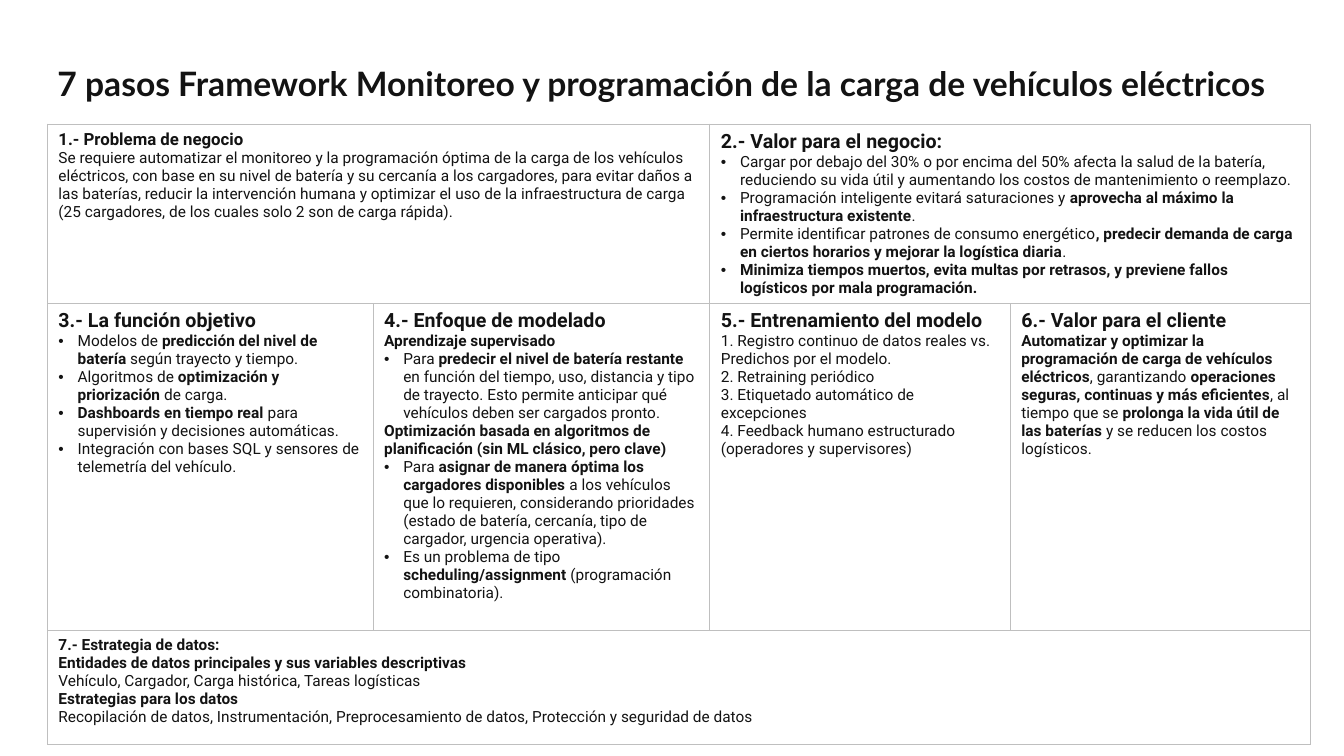
from lxml.etree import SubElement
from pptx import Presentation
from pptx.dml.color import RGBColor
from pptx.enum.text import MSO_ANCHOR, MSO_AUTO_SIZE, PP_ALIGN
from pptx.oxml import parse_xml
from pptx.oxml.ns import nsdecls, qn
from pptx.util import Inches, Pt

COLORS = {"ink": "131313", "border": "BFBFBF", "paper": "FFFFFF"}
SLIDE_SIZE = (13.33, 7.5)
LEFT, WIDTH = 0.47, 12.54
TITLE_TOP, TITLE_HEIGHT = 0.31, 0.77
TABLE_TOP = 1.23
COLUMNS = [3.23, 3.34, 2.98, 2.98]
ROWS = [1.78, 3.24, 1.13]
BULLET_INDENT = 0.19

TITLE = "7 pasos Framework Monitoreo y programación de la carga de vehículos eléctricos"

# Each step: row, column, columns spanned, heading size, heading, lines.
# A leading "• " makes a bullet; ** encloses bold words.
STEPS = [
    (0, 0, 2, 12, "1.- Problema de negocio", [
        "Se requiere automatizar el monitoreo y la programación óptima de la carga de los "
        "vehículos eléctricos, con base en su nivel de batería y su cercanía a los cargadores, "
        "para evitar daños a las baterías, reducir la intervención humana y optimizar el uso de "
        "la infraestructura de carga (25 cargadores, de los cuales solo 2 son de carga rápida).",
    ]),
    (0, 2, 2, 14, "2.- Valor para el negocio:", [
        "• Cargar por debajo del 30% o por encima del 50% afecta la salud de la batería, "
        "reduciendo su vida útil y aumentando los costos de mantenimiento o reemplazo.",
        "• Programación inteligente evitará saturaciones y **aprovecha al máximo la "
        "infraestructura existente**.",
        "• Permite identificar patrones de consumo energético**, predecir demanda de carga en "
        "ciertos horarios y mejorar la logística diaria**.",
        "• **Minimiza tiempos muertos, evita multas por retrasos, y previene fallos logísticos "
        "por mala programación.**",
    ]),
    (1, 0, 1, 14, "3.- La función objetivo", [
        "• Modelos de **predicción del nivel de batería** según trayecto y tiempo.",
        "• Algoritmos de **optimización y priorización** de carga.",
        "• **Dashboards en tiempo real** para supervisión y decisiones automáticas.",
        "• Integración con bases SQL y sensores de telemetría del vehículo.",
    ]),
    (1, 1, 1, 14, "4.- Enfoque de modelado", [
        "**Aprendizaje supervisado**",
        "• Para **predecir el nivel de batería restante** en función del tiempo, uso, distancia "
        "y tipo de trayecto. Esto permite anticipar qué vehículos deben ser cargados pronto.",
        "**Optimización basada en algoritmos de planificación (sin ML clásico, pero clave)**",
        "• Para **asignar de manera óptima los cargadores disponibles** a los vehículos que lo "
        "requieren, considerando prioridades (estado de batería, cercanía, tipo de cargador, "
        "urgencia operativa).",
        "• Es un problema de tipo **scheduling/assignment** (programación combinatoria).",
    ]),
    (1, 2, 1, 14, "5.- Entrenamiento del modelo", [
        "1. Registro continuo de datos reales vs. Predichos por el modelo.",
        "2. Retraining periódico",
        "3. Etiquetado automático de excepciones",
        "4. Feedback humano estructurado (operadores y supervisores)",
    ]),
    (1, 3, 1, 14, "6.- Valor para el cliente", [
        "**Automatizar y optimizar la programación de carga de vehículos eléctricos**, "
        "garantizando **operaciones seguras, continuas y más eficientes**, al tiempo que se "
        "**prolonga la vida útil de las baterías** y se reducen los costos logísticos.",
    ]),
    (2, 0, 4, 11, "7.- Estrategia de datos:", [
        "**Entidades de datos principales y sus variables descriptivas**",
        "Vehículo, Cargador, Carga histórica, Tareas logísticas",
        "**Estrategias para los datos**",
        "Recopilación de datos, Instrumentación, Preprocesamiento de datos, Protección y "
        "seguridad de datos",
    ]),
]


def write_text(paragraph, text, size=11, font="Roboto", color="ink", line_spacing=None):
    """Write one paragraph, turning ** marks into bold runs and "• " into a bullet."""
    paragraph.alignment = PP_ALIGN.LEFT
    if line_spacing:
        paragraph.line_spacing = line_spacing
    if text.startswith("• "):
        text = text[2:]
        add_bullet(paragraph)
    for index, words in enumerate(text.split("**")):
        if words:
            run = paragraph.add_run()
            run.text = words
            run.font.size = Pt(size)
            run.font.name = font
            run.font.bold = index % 2 == 1
            run.font.color.rgb = RGBColor.from_string(COLORS[color])


def add_bullet(paragraph):
    properties = paragraph._p.get_or_add_pPr()
    properties.set("marL", str(Inches(BULLET_INDENT)))
    properties.set("indent", str(-Inches(BULLET_INDENT)))
    SubElement(properties, qn("a:buFont"), typeface="Arial")
    SubElement(properties, qn("a:buChar"), char="•")


def style_cell(cell):
    cell.fill.solid()
    cell.fill.fore_color.rgb = RGBColor.from_string(COLORS["paper"])
    cell.margin_left = cell.margin_right = Inches(0.11)
    cell.margin_top = cell.margin_bottom = Inches(0.06)
    # Borders come before the fill
    properties = cell._tc.get_or_add_tcPr()
    for position, side in enumerate(("lnL", "lnR", "lnT", "lnB")):
        properties.insert(position, parse_xml(
            f'<a:{side} {nsdecls("a")} w="{Pt(0.5)}"><a:solidFill>'
            f'<a:srgbClr val="{COLORS["border"]}"/></a:solidFill></a:{side}>'))


def add_title(slide):
    title = slide.shapes.title
    title.left, title.top = Inches(LEFT), Inches(TITLE_TOP)
    title.width, title.height = Inches(WIDTH), Inches(TITLE_HEIGHT)
    frame = title.text_frame
    frame.auto_size = MSO_AUTO_SIZE.NONE
    frame.word_wrap = True
    frame.vertical_anchor = MSO_ANCHOR.BOTTOM
    write_text(frame.paragraphs[0], f"**{TITLE}**", size=24, font="Lato", line_spacing=0.9)


def add_framework(slide):
    framework = slide.shapes.add_table(
        len(ROWS), len(COLUMNS), Inches(LEFT), Inches(TABLE_TOP),
        Inches(WIDTH), Inches(sum(ROWS))).table
    framework.first_row = framework.horz_banding = False
    for column, width in zip(framework.columns, COLUMNS):
        column.width = Inches(width)
    for row, height in zip(framework.rows, ROWS):
        row.height = Inches(height)
    for cell in framework.iter_cells():
        style_cell(cell)
    for row, column, span, heading_size, heading, lines in STEPS:
        cell = framework.cell(row, column)
        if span > 1:
            cell.merge(framework.cell(row, column + span - 1))
        frame = cell.text_frame
        write_text(frame.paragraphs[0], f"**{heading}**", size=heading_size)
        for line in lines:
            write_text(frame.add_paragraph(), line)


def main():
    presentation = Presentation()
    presentation.slide_width, presentation.slide_height = map(Inches, SLIDE_SIZE)
    slide = presentation.slides.add_slide(presentation.slide_layouts[5])
    add_title(slide)
    add_framework(slide)
    presentation.save("out.pptx")


if __name__ == "__main__":
    main()
